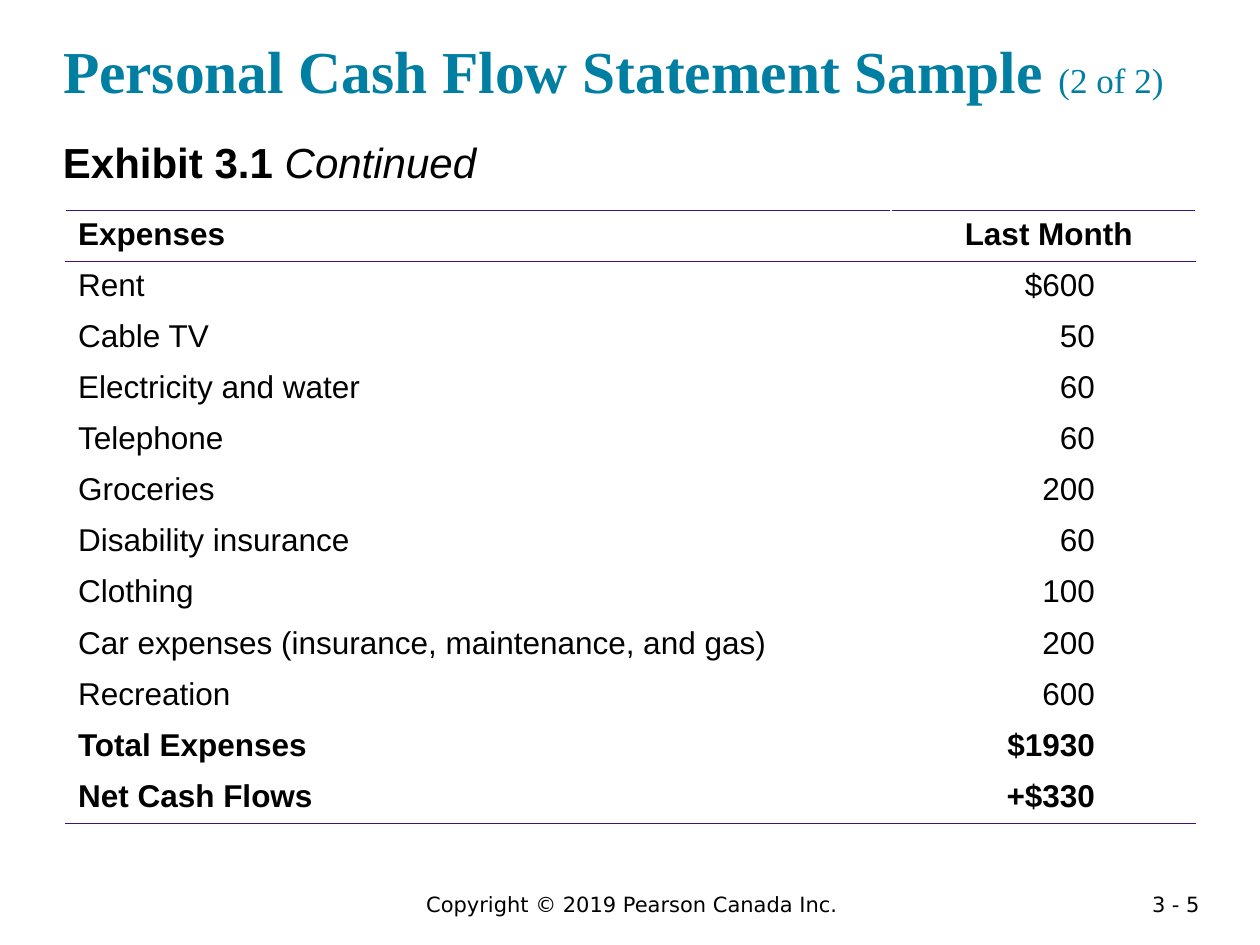
from lxml.etree import SubElement
from pptx import Presentation
from pptx.dml.color import RGBColor
from pptx.enum.text import MSO_ANCHOR, MSO_AUTO_SIZE, PP_ALIGN
from pptx.oxml.ns import qn
from pptx.util import Inches, Pt

TEAL, BLACK, PURPLE = "007FA3", "000000", "3C1581"
ROWS = [
    ("Expenses", "Last Month"),
    ("Rent", "$600"),
    ("Cable TV", "50"),
    ("Electricity and water", "60"),
    ("Telephone", "60"),
    ("Groceries", "200"),
    ("Disability insurance", "60"),
    ("Clothing", "100"),
    ("Car expenses (insurance, maintenance, and gas)", "200"),
    ("Recreation", "600"),
    ("Total Expenses", "$1930"),
    ("Net Cash Flows", "+$330"),
]
BOLD_ROWS = {0, 10, 11}


def color(value):
    return RGBColor.from_string(value)


class SlideBuilder:
    """Holds the current slide and its text and rule styles."""

    def __init__(self, slide):
        self.s = slide

    def style(self, font, size, name="Arial", fill=BLACK, bold=False, italic=False):
        font.name, font.size = name, Pt(size)
        font.bold, font.italic = bold, italic
        font.color.rgb = color(fill)

    def frame(self, sp, box, anchor=MSO_ANCHOR.TOP, inset=0):
        sp.left, sp.top, sp.width, sp.height = map(Inches, box)
        tf = sp.text_frame
        tf.word_wrap, tf.auto_size = True, MSO_AUTO_SIZE.NONE
        tf.vertical_anchor = anchor
        tf.margin_left = tf.margin_right = Inches(inset)
        tf.margin_top = tf.margin_bottom = Inches(inset / 2)
        return tf.paragraphs[0]

    def runs(self, p, parts):
        p.alignment = PP_ALIGN.LEFT
        for text, style in parts:
            r = p.add_run()
            r.text = text
            self.style(r.font, **style)

    def title(self, box, parts):
        self.runs(self.frame(self.s.shapes.title, box, MSO_ANCHOR.BOTTOM), parts)

    def heading(self, box, parts):
        sp = self.s.shapes.add_textbox(0, 0, 0, 0)
        self.runs(self.frame(sp, box), parts)

    def footer(self, box, text, align):
        p = self.frame(self.s.shapes.add_textbox(0, 0, 0, 0), box, inset=0.1)
        p.text, p.alignment = text, align
        self.style(p.font, 12, "DejaVu Sans")

    def rule(self, cell, sides):
        for i, side in enumerate(sides):
            tc_pr = cell._tc.get_or_add_tcPr()
            ln = SubElement(tc_pr, qn(f"a:ln{side}"), w=str(Pt(1)))
            fill = SubElement(ln, qn("a:solidFill"))
            SubElement(fill, qn("a:srgbClr"), val=PURPLE)
            tc_pr.insert(i, ln)

    def table(self, box, widths, rows, bold_rows):
        sp = self.s.shapes.add_table(len(rows), len(widths), *map(Inches, box))
        table = sp.table
        table.first_row = table.horz_banding = False
        for column, width in zip(table.columns, widths):
            column.width = Inches(width)
        last = len(rows) - 1
        for i, row in enumerate(rows):
            sides = {0: "TB", 1: "T", last: "B"}.get(i, "")
            for j, text in enumerate(row):
                cell = table.cell(i, j)
                cell.fill.background()
                self.rule(cell, sides)
                p = cell.text_frame.paragraphs[0]
                p.text = text
                self.style(p.font, 18, bold=i in bold_rows)
                if j:
                    p.alignment = PP_ALIGN.RIGHT
                    cell.margin_right = Inches(0.8 if i else 0.5)


def main():
    prs = Presentation()
    prs.slide_width, prs.slide_height = Inches(10), Inches(7.5)
    b = SlideBuilder(prs.slides.add_slide(prs.slide_layouts[5]))
    serif = {"name": "Times New Roman", "fill": TEAL}
    b.title((0.5, 0.24, 9, 0.6), [
        ("Personal Cash Flow Statement Sample ", {"size": 34, "bold": True, **serif}),
        ("(2 of 2)", {"size": 20, **serif}),
    ])
    b.heading((0.5, 1.08, 9.17, 0.42), [
        ("Exhibit 3.1 ", {"size": 24, "bold": True}),
        ("Continued", {"size": 24, "italic": True}),
    ])
    b.table((0.52, 1.67, 8.97, 4.87), (6.55, 2.42), ROWS, BOLD_ROWS)
    b.footer((1.64, 7.03, 6.75, 0.3), "Copyright © 2019 Pearson Canada Inc.", PP_ALIGN.CENTER)
    b.footer((8.62, 7.03, 1, 0.22), "3 - 5", PP_ALIGN.RIGHT)
    prs.save("out.pptx")


if __name__ == "__main__":
    main()
